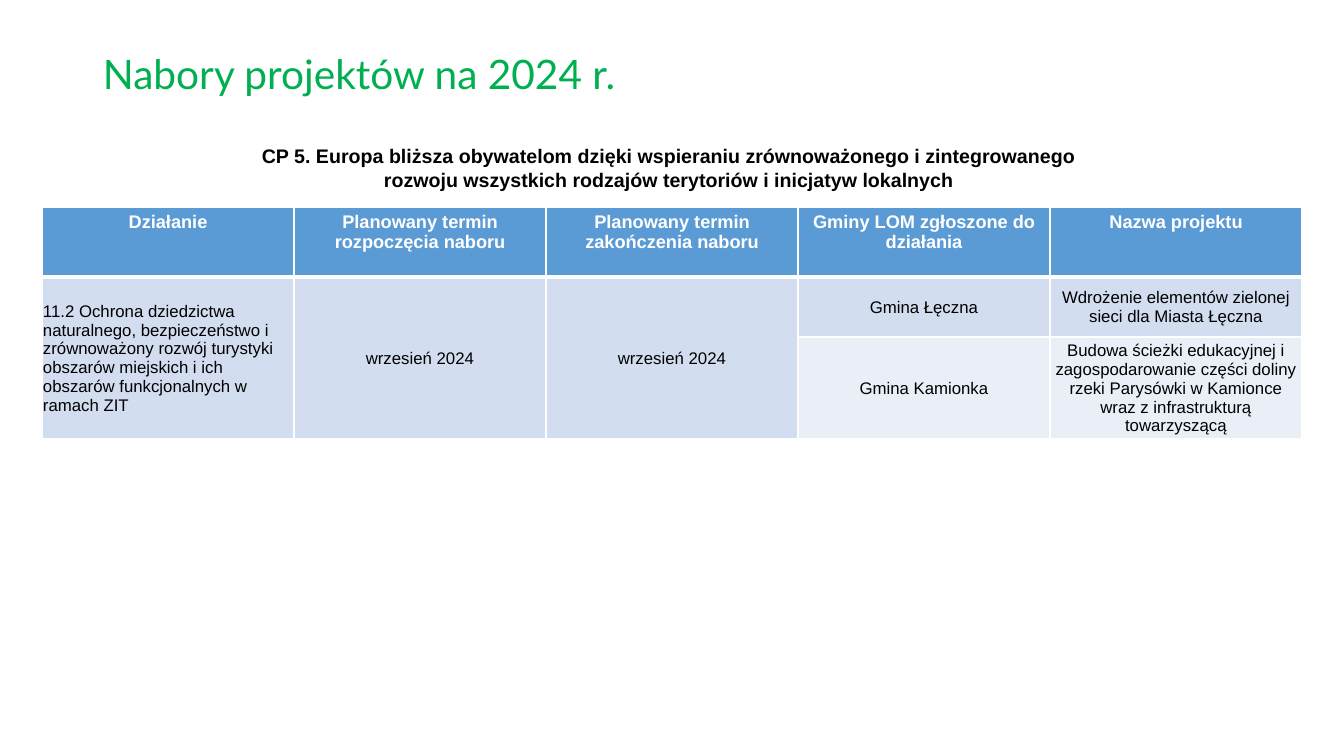
from lxml import etree
from pptx import Presentation
from pptx.dml.color import RGBColor
from pptx.enum.text import MSO_ANCHOR, PP_ALIGN
from pptx.oxml.ns import qn
from pptx.util import Pt

TOP, MIDDLE = MSO_ANCHOR.TOP, MSO_ANCHOR.MIDDLE
LEFT, CENTER = PP_ALIGN.LEFT, PP_ALIGN.CENTER
SCALE = 914400 / 100.8
COLORS = {
    "title": "00B050",
    "text": "000000",
    "white": "FFFFFF",
    "header": "5B9BD5",
    "band": "D2DEEF",
    "band_light": "EAEFF7",
}
HEADERS = [
    "Działanie",
    "Planowany termin rozpoczęcia naboru",
    "Planowany termin zakończenia naboru",
    "Gminy LOM zgłoszone do działania",
    "Nazwa projektu",
]
PROJECTS = [
    [
        "11.2 Ochrona dziedzictwa naturalnego, bezpieczeństwo i zrównoważony "
        "rozwój turystyki obszarów miejskich i ich obszarów funkcjonalnych w ramach ZIT",
        "wrzesień 2024",
        "wrzesień 2024",
        "Gmina Łęczna",
        "Wdrożenie elementów zielonej sieci dla Miasta Łęczna",
    ],
    [
        "",
        "",
        "",
        "Gmina Kamionka",
        "Budowa ścieżki edukacyjnej i zagospodarowanie części doliny rzeki "
        "Parysówki w Kamionce wraz z infrastrukturą towarzyszącą",
    ],
]
MERGED_COLUMNS = 3


def px(n):
    return round(n * SCALE)


def rgb(name):
    return RGBColor.from_string(COLORS[name])


def write(tf, text, size=12, color="text", font="Arial", bold=False, align=LEFT, spacing=None):
    p = tf.paragraphs[0]
    p.alignment = align
    p.line_spacing = spacing
    p.font.size = Pt(size)
    p.font.name = font
    p.font.bold = bold
    p.font.color.rgb = rgb(color)
    for i, line in enumerate(text.split("\n")):
        if i:
            p.add_line_break()
        r = p.add_run()
        r.text = line
        r.font.size = Pt(size)
        r.font.name = font
        r.font.bold = bold
        r.font.color.rgb = rgb(color)


class Deck:
    """Holds the presentation style and the current slide."""

    def __init__(self, width, height):
        self.prs = Presentation()
        self.prs.slide_width, self.prs.slide_height = px(width), px(height)
        self.s = self.prs.slides.add_slide(self.prs.slide_layouts[6])

    def text(self, x, y, w, h, text, anchor=TOP, wrap=True, **style):
        sp = self.s.shapes.add_textbox(px(x), px(y), px(w), px(h))
        tf = sp.text_frame
        tf.word_wrap = wrap
        tf.vertical_anchor = anchor
        write(tf, text, **style)

    def borders(self, cell, bottom):
        tc_pr = cell._tc.get_or_add_tcPr()
        for side, width in (("L", 1), ("R", 1), ("T", 1), ("B", bottom)):
            ln = etree.SubElement(tc_pr, qn(f"a:ln{side}"), w=str(Pt(width)))
            fill = etree.SubElement(ln, qn("a:solidFill"))
            etree.SubElement(fill, qn("a:srgbClr"), val=COLORS["white"])

    def cell(self, cell, text, fill, bottom=1, **style):
        self.borders(cell, bottom)
        cell.fill.solid()
        cell.fill.fore_color.rgb = rgb(fill)
        if text:
            write(cell.text_frame, text, **style)

    def table(self, x, y, col_width, row_heights):
        columns = len(HEADERS)
        frame = self.s.shapes.add_table(
            len(row_heights), columns, px(x), px(y), px(col_width * columns), px(sum(row_heights))
        )
        table = frame.table
        for column in table.columns:
            column.width = px(col_width)
        for row, height in zip(table.rows, row_heights):
            row.height = px(height)
        for c, text in enumerate(HEADERS):
            self.cell(table.cell(0, c), text, "header", bottom=3,
                      size=13, color="white", bold=True, align=CENTER)
        for r, row in enumerate(PROJECTS, 1):
            for c, text in enumerate(row):
                cell = table.cell(r, c)
                cell.vertical_anchor = MIDDLE
                cell.margin_left = cell.margin_right = cell.margin_top = px(1)
                cell.margin_bottom = 0
                fill = "band" if r == 1 or c < MERGED_COLUMNS else "band_light"
                self.cell(cell, text, fill, align=CENTER if c else LEFT)
        for c in range(MERGED_COLUMNS):
            table.cell(1, c).merge(table.cell(2, c))


def main():
    deck = Deck(1344, 756)
    deck.text(93, 3, 1159, 146, "Nabory projektów na 2024 r.", anchor=MIDDLE,
              size=29, color="title", font="Lato", spacing=0.9)
    deck.table(42, 207, 252, [70, 60, 95])
    deck.text(247, 139, 844, 57,
              "CP 5. Europa bliższa obywatelom dzięki wspieraniu zrównoważonego i zintegrowanego\n"
              "rozwoju wszystkich rodzajów terytoriów i inicjatyw lokalnych",
              wrap=False, size=14, bold=True, align=CENTER)
    deck.prs.save("out.pptx")


if __name__ == "__main__":
    main()
